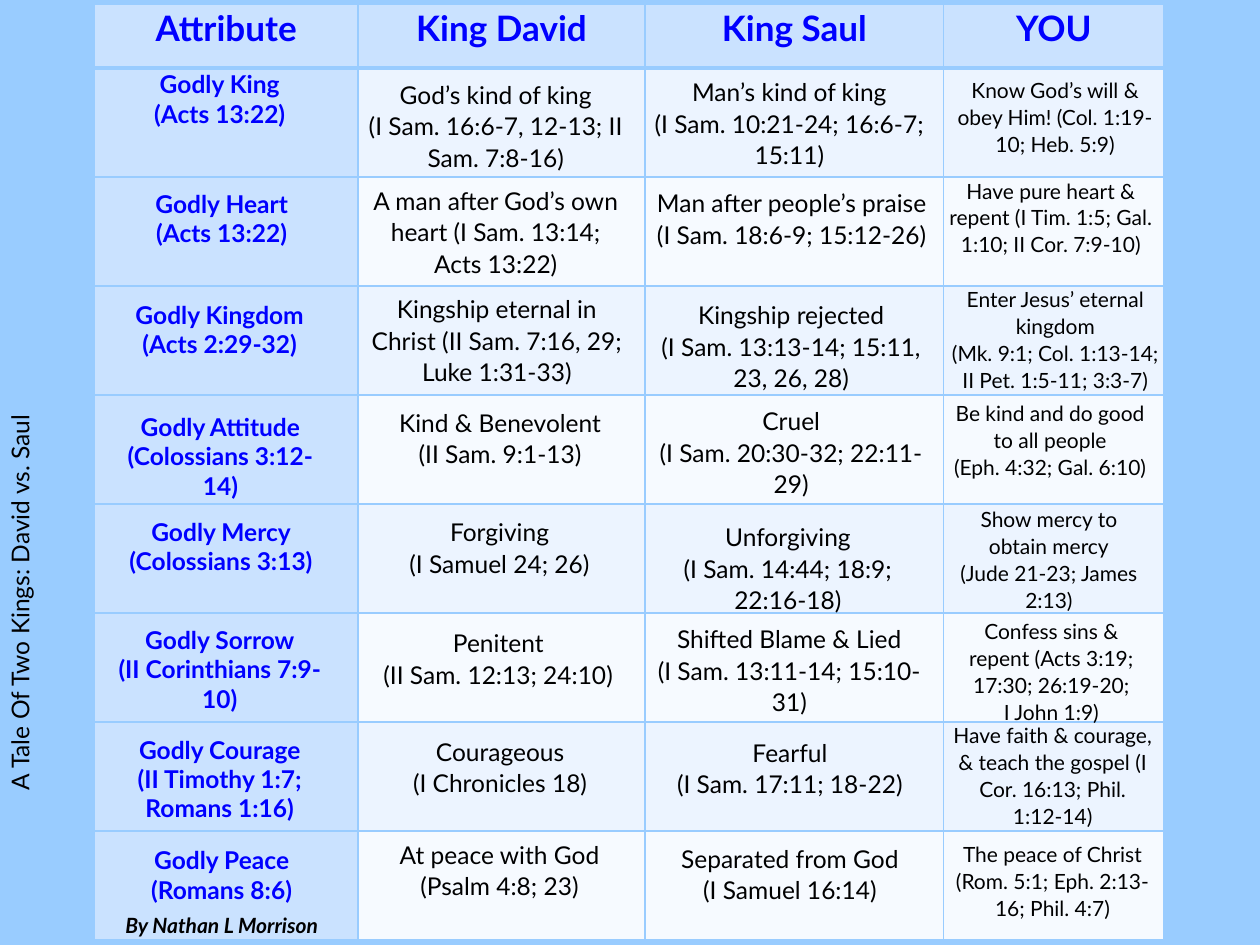
from pptx import Presentation
from pptx import util as u
from pptx.dml.color import RGBColor
from pptx.enum import text
from pptx.oxml import parse_xml
from pptx.oxml.ns import nsdecls

SKY, PALE, ICE, SNOW = "99CCFF", "CAE2FF", "ECF4FF", "F6FAFF"
BLUE, BLACK = "0000FF", "000000"
HEAD = dict(size=u.Pt(20), bold=True)
LABEL = dict(size=u.Pt(14), bold=True)
BODY = dict(size=u.Pt(14))
NOTE = dict(size=u.Pt(12))
SIGN = dict(size=u.Pt(12), bold=True, italic=True)
WIDTHS = [150.5, 164.2, 170.6, 126]
HEIGHTS = [36.7] + [62.3] * 8
TITLES = ["Attribute", "King David", "King Saul", "YOU"]

LABELS = [
    (57.6, 36, 136, 70.6, "Godly King\n(Acts 13:22)"),
    (57.6, 104.4, 138.2, 70.6, "Godly Heart\n(Acts 13:22)"),
    (57.6, 167.8, 136, 70.6, "Godly Kingdom\n(Acts 2:29-32)"),
    (57.6, 231.8, 136.8, 87, "Godly Attitude\n(Colossians 3:12-14)"),
    (56.9, 291.6, 139, 70.6, "Godly Mercy\n(Colossians 3:13)"),
    (56.9, 353.5, 137.5, 87, "Godly Sorrow\n(II Corinthians 7:9-10)"),
    (57.6, 416.2, 136, 87, "Godly Courage\n(II Timothy 1:7; Romans 1:16)"),
    (58.3, 479.5, 136.8, 41, "Godly Peace\n(Romans 8:6)"),
]
DAVID = [
    (202.3, 41, 162, 59.8, "God’s kind of king\n(I Sam. 16:6-7, 12-13; II Sam. 7:8-16)"),
    (202.3, 101.5, 162, 59.8, "A man after God’s own heart (I Sam. 13:14; Acts 13:22)"),
    (202.3, 163.4, 163.4, 59.8, "Kingship eternal in Christ (II Sam. 7:16, 29; Luke 1:31-33)"),
    (205.2, 228.2, 161.3, 41.8, "Kind & Benevolent\n(II Sam. 9:1-13)"),
    (205.2, 290.9, 160.6, 41.8, "Forgiving\n(I Samuel 24; 26)"),
    (202.3, 354.2, 164.9, 41.8, "Penitent\n(II Sam. 12:13; 24:10)"),
    (205.2, 416.2, 161.3, 41.8, "Courageous\n(I Chronicles 18)"),
    (205.2, 475.2, 160.6, 41.8, "At peace with God\n(Psalm 4:8; 23)"),
]
SAUL = [
    (365.8, 39.6, 170.6, 59.8, "Man’s kind of king\n(I Sam. 10:21-24; 16:6-7; 15:11)"),
    (367.2, 103, 170.6, 59.8, "Man after people’s praise (I Sam. 18:6-9; 15:12-26)"),
    (367.2, 167, 169.9, 59.8, "Kingship rejected\n(I Sam. 13:13-14; 15:11, 23, 26, 28)"),
    (367.2, 227.5, 169.9, 59.8, "Cruel\n(I Sam. 20:30-32; 22:11-29)"),
    (365, 293.8, 170.6, 59.8, "Unforgiving\n(I Sam. 14:44; 18:9; 22:16-18)"),
    (365.8, 352.1, 170.6, 59.8, "Shifted Blame & Lied\n(I Sam. 13:11-14; 15:10-31)"),
    (367.2, 416.9, 168.5, 41.8, "Fearful\n(I Sam. 17:11; 18-22)"),
    (367.2, 477.4, 168.5, 41.8, "Separated from God\n(I Samuel 16:14)"),
]
YOU = [
    (535.7, 39.6, 134.6, 52.6, "Know God’s will & obey Him! (Col. 1:19-10; Heb. 5:9)"),
    (532.8, 97.2, 135.4, 68.4, "Have pure heart & repent (I Tim. 1:5; Gal. 1:10; II Cor. 7:9-10)"),
    (527.8, 159.1, 150.5, 68.4,
     "Enter Jesus’ eternal kingdom\n(Mk. 9:1; Col. 1:13-14;\nII Pet. 1:5-11; 3:3-7)"),
    (537.1, 224.6, 126, 68.4, "Be kind and do good to all people\n(Eph. 4:32; Gal. 6:10)"),
    (536.4, 285.1, 126, 68.4, "Show mercy to obtain mercy\n(Jude 21-23; James 2:13)"),
    (537.8, 349.2, 126, 83.5,
     "Confess sins & repent (Acts 3:19; 17:30; 26:19-20;\nI John 1:9)"),
    (537.1, 408.2, 128.9, 68.4,
     "Have faith & courage, & teach the gospel (I Cor. 16:13; Phil. 1:12-14)"),
    (537.8, 476.6, 127.4, 52.6, "The peace of Christ\n(Rom. 5:1; Eph. 2:13-16; Phil. 4:7)"),
]


def paint(fill, tint):
    fill.solid()
    fill.fore_color.rgb = RGBColor.from_string(tint)


class Deck:
    """Holds the font and the current slide, and draws each kind of element."""

    def __init__(self, font, back):
        self.font = font
        self.show = Presentation()
        self.show.slide_width, self.show.slide_height = u.Pt(720), u.Pt(540)
        self.slide = self.show.slides.add_slide(self.show.slide_layouts[6])
        paint(self.slide.background.fill, back)

    def label(self, frame, words, form, tint, lead=None, align=text.PP_ALIGN.CENTER):
        for i, line in enumerate(words.split("\n")):
            para = frame.add_paragraph() if i else frame.paragraphs[0]
            para.alignment = align
            para.line_spacing = lead
            run = para.add_run()
            run.text = line
            for key, val in dict(form, name=self.font).items():
                setattr(run.font, key, val)
            paint(run.font.fill, tint)

    def box(self, x, y, w, h, words, form, tint, grow=True, turn=0, **more):
        shape = self.slide.shapes.add_textbox(*map(u.Pt, (x, y, w, h)))
        shape.rotation = turn
        frame = shape.text_frame
        frame.word_wrap = True
        fit = text.MSO_AUTO_SIZE
        frame.auto_size = fit.SHAPE_TO_FIT_TEXT if grow else fit.NONE
        self.label(frame, words, form, tint, **more)

    def edge(self, cell, tint, **sides):
        props = cell._tc.get_or_add_tcPr()
        for side in "LRTB":
            wide = u.Pt(sides.get(side, 1))
            props.append(parse_xml(
                f'<a:ln{side} {nsdecls("a")} w="{wide}"><a:solidFill>'
                f'<a:srgbClr val="{tint}"/></a:solidFill></a:ln{side}>'))

    def grid(self, x, y, wides, highs, heads):
        size = map(u.Pt, (x, y, sum(wides), sum(highs)))
        table = self.slide.shapes.add_table(len(highs), len(wides), *size).table
        table.horz_banding = table.first_row = False
        for col, wide in zip(table.columns, wides):
            col.width = u.Pt(wide)
        for r, high in enumerate(highs):
            table.rows[r].height = u.Pt(high)
            for c, head in enumerate(heads):
                cell = table.cell(r, c)
                edges = {0: {"B": 3}, 1: {"T": 3}}.get(r, {})
                self.edge(cell, SKY, **edges)
                plain = ICE if r % 2 else SNOW
                paint(cell.fill, PALE if r == 0 or c == 0 else plain)
                if r == 0:
                    cell.margin_left = cell.margin_right = u.Pt(3.6)
                    cell.margin_top = cell.margin_bottom = 0
                    self.label(cell.text_frame, head, HEAD, BLUE, 1.07)


def main():
    deck = Deck("Lato", SKY)
    deck.grid(54, 2.2, WIDTHS, HEIGHTS, TITLES)
    for items, form, tint, lead in (
        (LABELS, LABEL, BLUE, None),
        (DAVID, BODY, BLACK, 1.07),
        (SAUL, BODY, BLACK, 1.07),
        (YOU, NOTE, BLACK, 1.07),
    ):
        for item in items:
            deck.box(*item, form, tint, lead=lead)
    deck.box(-133.2, 301.7, 289.4, 24.5, "A Tale Of Two Kings: David vs. Saul",
             BODY, BLACK, grow=False, turn=270, align=text.PP_ALIGN.LEFT)
    deck.box(-20.2, 517.7, 293.8, 37.4, "By Nathan L Morrison", SIGN, BLACK, grow=False)
    deck.show.save("out.pptx")


if __name__ == "__main__":
    main()
